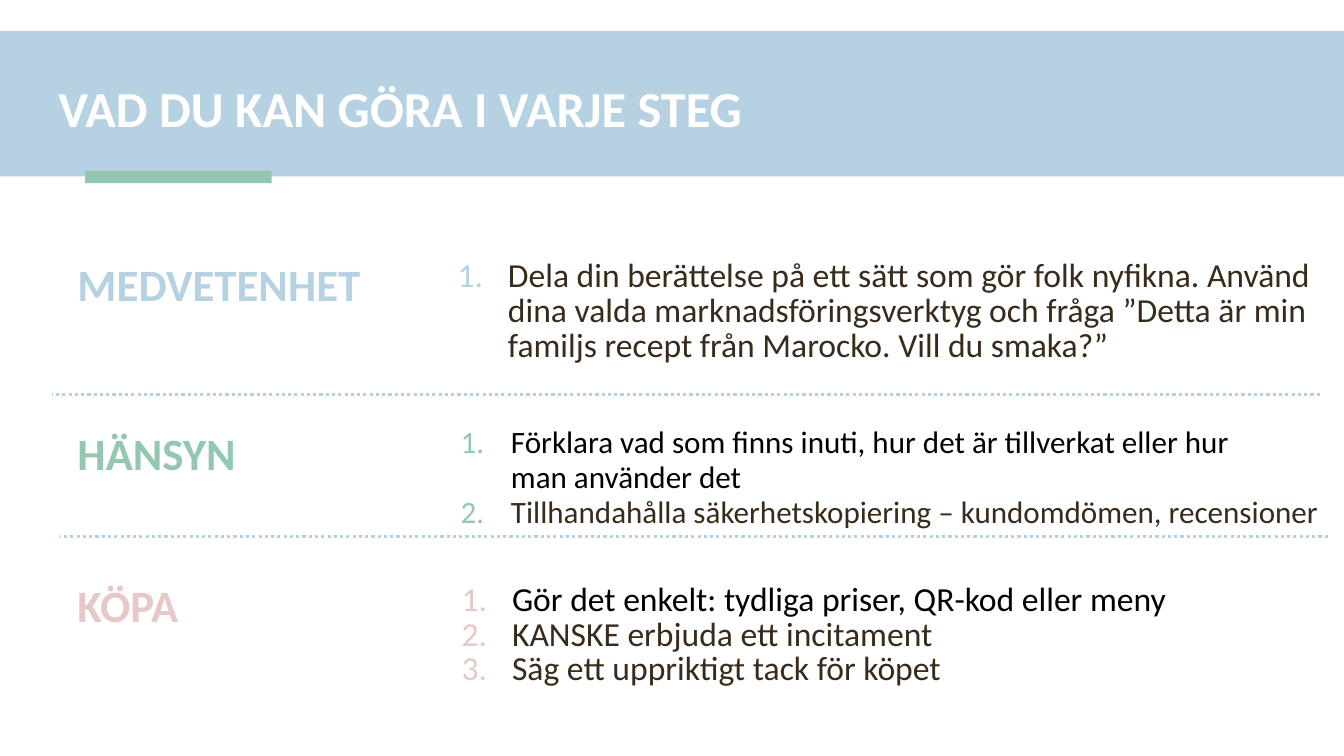
"""Build the slide on what to do at each step: awareness, consideration, purchase."""
from lxml import etree
from pptx import Presentation
from pptx import util as u
from pptx.dml.color import RGBColor
from pptx.enum import dml, shapes, text
from pptx.oxml import ns

BLUE, GREEN, PINK = "B6D1E1", "94C7B0", "E6C8C7"
WHITE, BLACK, BROWN = "FFFFFF", "000000", "382B1B"

presentation = Presentation()
presentation.slide_width, presentation.slide_height = u.Inches(13.33), u.Inches(7.5)
slide = presentation.slides.add_slide(presentation.slide_layouts[6])
column, row = presentation.slide_width / 100, presentation.slide_height / 100


def paint(color_format, color):
    color_format.rgb = RGBColor.from_string(color)


def add_text(left, top, width, height, lines, size, bold=False, spacing=0.9,
             anchor=text.MSO_ANCHOR.TOP, number_color=None):
    shape = slide.shapes.add_textbox(
        round(left * column), round(top * row), round(width * column), round(height * row))
    frame = shape.text_frame
    for name, value in {"word_wrap": True, "vertical_anchor": anchor}.items():
        setattr(frame, name, value)
    for index, (words, color) in enumerate(lines):
        paragraph = frame.add_paragraph() if index else frame.paragraphs[0]
        paragraph.text = words
        paragraph.line_spacing = spacing
        if number_color:
            properties = paragraph._p.get_or_add_pPr()
            properties.set("marL", str(u.Inches(0.5)))
            properties.set("indent", str(-u.Inches(0.5)))
            bullet_color = etree.SubElement(properties, ns.qn("a:buClr"))
            etree.SubElement(bullet_color, ns.qn("a:srgbClr"), val=number_color)
            etree.SubElement(properties, ns.qn("a:buFont"), typeface="+mj-lt")
            etree.SubElement(properties, ns.qn("a:buAutoNum"), type="arabicPeriod")
        for run in paragraph.runs:
            for name, value in {"name": "Calibri", "size": u.Pt(size), "bold": bold}.items():
                setattr(run.font, name, value)
            paint(run.font.color, color)


for left, top, width, height, color in [
    (0, 4.13, 100, 19.2, BLUE),
    (6.33, 22.6, 13.88, 1.65, GREEN),
]:
    bar = slide.shapes.add_shape(
        shapes.MSO_SHAPE.RECTANGLE,
        round(left * column), round(top * row), round(width * column), round(height * row))
    bar.shadow.inherit = False
    bar.fill.solid()
    paint(bar.fill.fore_color, color)
    bar.line.fill.background()

add_text(3.6, 7.73, 74.64, 14, [("VAD DU KAN GÖRA I VARJE STEG", WHITE)], 36,
         bold=True, anchor=text.MSO_ANCHOR.MIDDLE)

steps = [
    ("MEDVETENHET", BLUE, 36.13, u.Pt(23.4), (33.31, 33.73, 66.69, 18.8), 24, [
        ("Dela din berättelse på ett sätt som gör folk nyfikna. Använd dina valda "
         "marknadsföringsverktyg och fråga ”Detta är min familjs recept från Marocko. "
         "Vill du smaka?”", BROWN)]),
    ("HÄNSYN", GREEN, 56.4, 0.9, (33.53, 55.6, 69.62, 18.93), 22.2, [
        ("Förklara vad som finns inuti, hur det är tillverkat eller hur\vman använder det", BLACK),
        ("Tillhandahålla säkerhetskopiering – kundomdömen, recensioner", BROWN)]),
    ("KÖPA", PINK, 76.53, 0.9, (33.61, 76.53, 66.09, 18.8), 24, [
        ("Gör det enkelt: tydliga priser, QR-kod eller meny", BLACK),
        ("KANSKE erbjuda ett incitament", BROWN),
        ("Säg ett uppriktigt tack för köpet", BROWN)]),
]
for heading, color, top, spacing, area, size, advice in steps:
    add_text(5.03, top, 27.98, 15.2, [(heading, color)], 32, bold=True, spacing=spacing)
    add_text(*area, advice, size, spacing=u.Pt(24.8), number_color=color)

for right, left, height in [(98.2, 3.9, 52.13), (98.8, 4.43, 70.93)]:
    divider = slide.shapes.add_connector(
        shapes.MSO_CONNECTOR.STRAIGHT,
        round(right * column), round(height * row), round(left * column), round(height * row))
    paint(divider.line.color, BLUE)
    for name, value in {"width": u.Pt(2.25), "dash_style": dml.MSO_LINE.ROUND_DOT}.items():
        setattr(divider.line, name, value)
    etree.SubElement(divider._element.spPr, ns.qn("a:effectLst"))

presentation.save("out.pptx")
